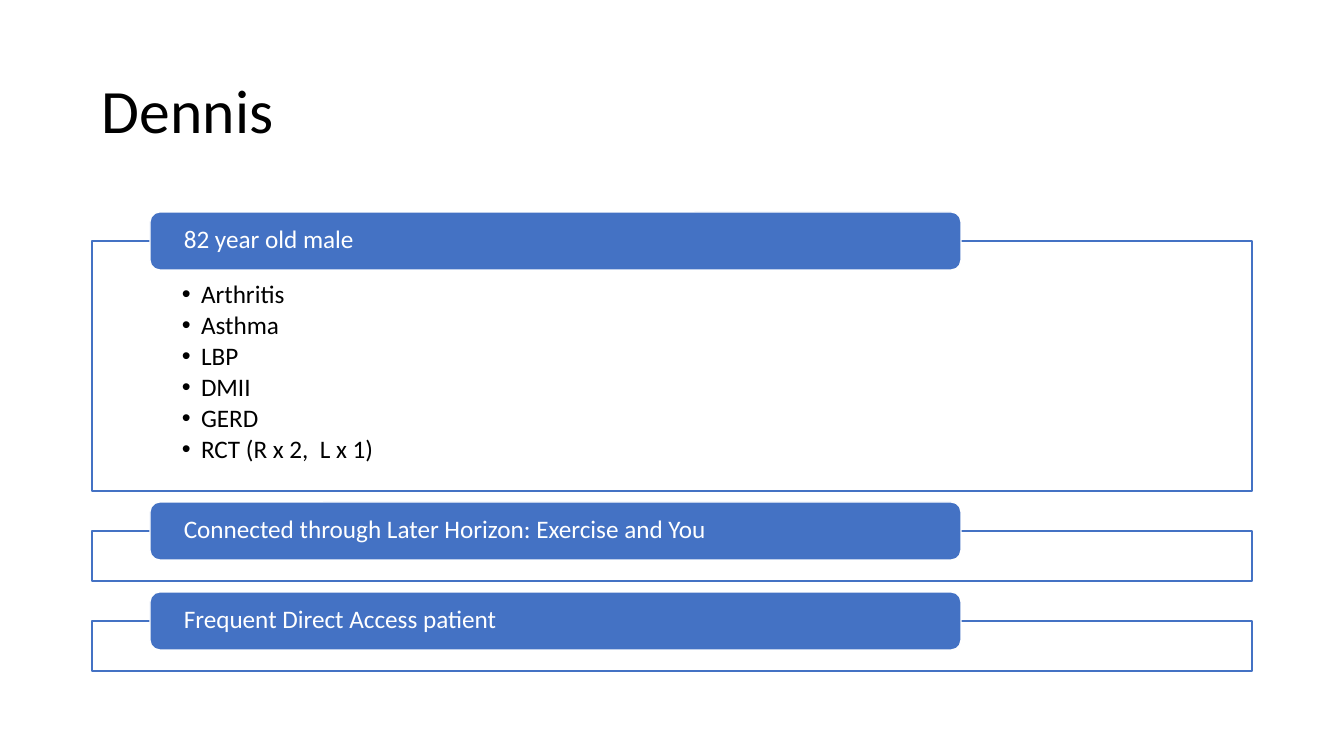
from lxml import etree
from pptx import Presentation
from pptx.dml.color import RGBColor
from pptx.enum.shapes import MSO_SHAPE
from pptx.enum.text import MSO_ANCHOR, MSO_AUTO_SIZE, PP_ALIGN
from pptx.oxml.ns import qn
from pptx.util import Pt

RECT = MSO_SHAPE.RECTANGLE
ROUNDED = MSO_SHAPE.ROUNDED_RECTANGLE
TOP = MSO_ANCHOR.TOP
MIDDLE = MSO_ANCHOR.MIDDLE
LEFT = PP_ALIGN.LEFT
NO_FIT = MSO_AUTO_SIZE.NONE

BLACK = RGBColor(0x00, 0x00, 0x00)
WHITE = RGBColor(0xFF, 0xFF, 0xFF)
BLUE = RGBColor(0x44, 0x72, 0xC4)

EMU_PER_INCH = 914400
PX_PER_INCH = 100.8
FONT = "Calibri"

FRAME_X, FRAME_W = 92, 1160
FIRST_FRAME_Y, FRAME_GAP = 241, 40
BANNER_X, BANNER_W, BANNER_H = 150, 811, 58

CONDITIONS = ["Arthritis", "Asthma", "LBP", "DMII", "GERD", "RCT (R x 2,  L x 1)"]
SECTIONS = [
    ("82 year old male", 250, CONDITIONS),
    ("Connected through Later Horizon: Exercise and You", 50, []),
    ("Frequent Direct Access patient", 50, []),
]


def px(n):
    return round(n * EMU_PER_INCH / PX_PER_INCH)


def place(sp, x, y, w, h):
    sp.left, sp.top, sp.width, sp.height = px(x), px(y), px(w), px(h)


def set_bullet(p, indent):
    pPr = p._p.get_or_add_pPr()
    pPr.set("marL", str(px(indent)))
    pPr.set("indent", str(-px(indent)))
    etree.SubElement(pPr, qn("a:buFont")).set("typeface", "Arial")
    etree.SubElement(pPr, qn("a:buChar")).set("char", "•")


def write(sp, lines, size=18, color=BLACK, anchor=MIDDLE,
          insets=(10, 5, 10, 5), after=0, level=0, indent=0):
    tf = sp.text_frame
    tf.word_wrap = True
    tf.auto_size = NO_FIT
    tf.vertical_anchor = anchor
    tf.margin_left, tf.margin_top, tf.margin_right, tf.margin_bottom = map(px, insets)
    for i, line in enumerate(lines):
        p = tf.add_paragraph() if i else tf.paragraphs[0]
        p.level = level
        p.alignment = LEFT
        p.line_spacing = 0.9
        p.space_before = Pt(0)
        p.space_after = Pt(after)
        if indent:
            set_bullet(p, indent)
        r = p.add_run()
        r.text = line
        r.font.name = FONT
        r.font.size = Pt(size)
        r.font.color.rgb = color


def paint(sp, fill, line, opacity=100):
    sp.fill.solid()
    sp.fill.fore_color.rgb = fill
    if opacity < 100:
        color = sp._element.spPr.find(qn("a:solidFill"))[0]
        etree.SubElement(color, qn("a:alpha")).set("val", str(opacity * 1000))
    sp.line.color.rgb = line
    sp.line.width = Pt(1)


def add_box(slide, kind, x, y, w, h):
    sp = slide.shapes.add_shape(kind, px(x), px(y), px(w), px(h))
    sp.shadow.inherit = False
    return sp


def add_section(slide, y, height, heading, items):
    if items:
        frame = slide.placeholders[1]
        place(frame, FRAME_X, y, FRAME_W, height)
        write(frame, items, anchor=TOP, insets=(90, 41, 90, 14),
              after=2.7, level=1, indent=19)
    else:
        frame = add_box(slide, RECT, FRAME_X, y, FRAME_W, height)
    paint(frame, WHITE, BLUE, opacity=90)
    banner = add_box(slide, ROUNDED, BANNER_X, y - BANNER_H // 2, BANNER_W, BANNER_H)
    paint(banner, BLUE, WHITE)
    write(banner, [heading], color=WHITE, insets=(31, 0, 31, 2))


def main():
    prs = Presentation()
    prs.slide_width, prs.slide_height = px(1344), px(756)
    slide = prs.slides.add_slide(prs.slide_layouts[1])
    title = slide.shapes.title
    place(title, FRAME_X, 41, FRAME_W, 146)
    write(title, ["Dennis"], size=44)
    y = FIRST_FRAME_Y
    for heading, height, items in SECTIONS:
        add_section(slide, y, height, heading, items)
        y += height + FRAME_GAP
    prs.save("out.pptx")


if __name__ == "__main__":
    main()
